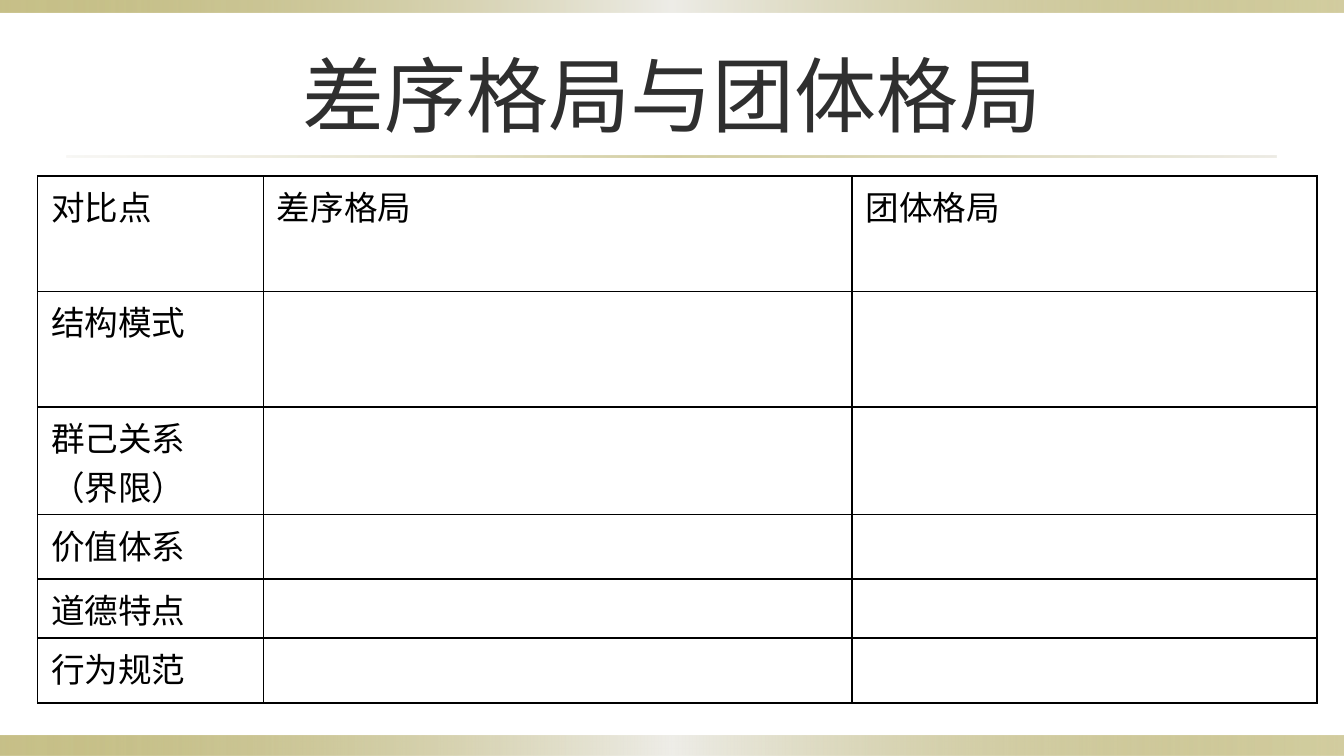
from dataclasses import dataclass

import pptx
import pptx.dml.color
import pptx.enum.shapes
import pptx.enum.text
import pptx.oxml
import pptx.oxml.ns
import pptx.slide
import pptx.table
import pptx.text.text
import pptx.util

Inches = pptx.util.Inches
Pt = pptx.util.Pt

COLORS = {
    "olive": "918415",
    "pale": "EEEDE8",
    "sand": "DCD9CC",
    "title": "2F2F2F",
    "ink": "000000",
}
FONT = "Cabin"
NS = pptx.oxml.ns.nsdecls("a")
SLIDE_WIDTH = 10
SLIDE_HEIGHT = SLIDE_WIDTH * 9 / 16


@dataclass(frozen=True)
class Stop:
    position: int
    color: str
    alpha: int = 100


@dataclass(frozen=True)
class Band:
    left: float
    top: float
    width: float
    height: float
    stops: tuple[Stop, ...]


EDGE = (Stop(0, "olive", 50), Stop(50, "pale"), Stop(100, "olive", 40))
RULE = (Stop(0, "sand", 20), Stop(50, "olive", 40), Stop(100, "sand", 50))
BANDS = (
    Band(0, SLIDE_HEIGHT - 0.15, SLIDE_WIDTH, 0.15, EDGE),
    Band(0, 0, SLIDE_WIDTH, 0.09, EDGE),
    Band(0.5, 1.16, 9, 0.01, RULE),
)

COLUMN_WIDTHS = (1.68, 4.38, 3.46)
ROW_HEIGHTS = (0.86, 0.86, 0.8, 0.48, 0.44, 0.48)
ROWS = (
    ("对比点", "差序格局", "团体格局"),
    ("结构模式", "", ""),
    ("群己关系（界限）", "", ""),
    ("价值体系", "", ""),
    ("道德特点", "", ""),
    ("行为规范", "", ""),
)


def add_run(p: pptx.text.text._Paragraph, text: str, size: float, color: str) -> None:
    r = p.add_run()
    r.text = text
    r.font.name = FONT
    r.font.size = Pt(size)
    r.font.color.rgb = pptx.dml.color.RGBColor.from_string(COLORS[color])


def add_band(s: pptx.slide.Slide, band: Band) -> None:
    """Draw a borderless rectangle with a left-to-right gradient."""
    sp = s.shapes.add_shape(
        pptx.enum.shapes.MSO_SHAPE.RECTANGLE,
        Inches(band.left), Inches(band.top), Inches(band.width), Inches(band.height),
    )
    sp.shadow.inherit = False
    sp.line.fill.background()
    stops = "".join(
        f'<a:gs pos="{stop.position * 1000}"><a:srgbClr val="{COLORS[stop.color]}">'
        f'<a:alpha val="{stop.alpha * 1000}"/></a:srgbClr></a:gs>'
        for stop in band.stops
    )
    gradient = pptx.oxml.parse_xml(
        f'<a:gradFill {NS} rotWithShape="1"><a:gsLst>{stops}</a:gsLst>'
        '<a:lin ang="0" scaled="0"/></a:gradFill>'
    )
    sp._element.spPr.find(pptx.oxml.ns.qn("a:prstGeom")).addnext(gradient)


def add_title(s: pptx.slide.Slide, text: str) -> None:
    sp = s.shapes.add_textbox(Inches(0.5), Inches(0.23), Inches(9), Inches(0.94))
    tf = sp.text_frame
    tf.word_wrap = True
    tf.vertical_anchor = pptx.enum.text.MSO_ANCHOR.MIDDLE
    p = tf.paragraphs[0]
    p.alignment = pptx.enum.text.PP_ALIGN.CENTER
    add_run(p, text, 44, "title")


def style_cell(cell: pptx.table._Cell) -> None:
    """Give a cell thin borders on all sides, no fill and narrow margins."""
    tc_pr = cell._tc.get_or_add_tcPr()
    for side in ("lnL", "lnR", "lnT", "lnB"):
        tc_pr.append(pptx.oxml.parse_xml(
            f'<a:{side} {NS} w="{Pt(1)}"><a:solidFill>'
            f'<a:srgbClr val="{COLORS["ink"]}"/></a:solidFill></a:{side}>'
        ))
    cell.fill.background()
    cell.margin_left = cell.margin_right = Inches(0.1)
    cell.margin_top = cell.margin_bottom = Inches(0.04)


def add_comparison_table(s: pptx.slide.Slide) -> None:
    table = s.shapes.add_table(
        len(ROWS), len(COLUMN_WIDTHS), Inches(0.28), Inches(1.31),
        Inches(sum(COLUMN_WIDTHS)), Inches(sum(ROW_HEIGHTS)),
    ).table
    table.first_row = False
    table.horz_banding = False
    for column, width in zip(table.columns, COLUMN_WIDTHS):
        column.width = Inches(width)
    for row, height, texts in zip(table.rows, ROW_HEIGHTS, ROWS):
        row.height = Inches(height)
        for cell, text in zip(row.cells, texts):
            style_cell(cell)
            if text:
                add_run(cell.text_frame.paragraphs[0], text, 18, "ink")


def main() -> None:
    prs = pptx.Presentation()
    prs.slide_width = Inches(SLIDE_WIDTH)
    prs.slide_height = Inches(SLIDE_HEIGHT)
    s = prs.slides.add_slide(prs.slide_layouts[6])
    for band in BANDS:
        add_band(s, band)
    add_title(s, "差序格局与团体格局")
    add_comparison_table(s)
    prs.save("out.pptx")


if __name__ == "__main__":
    main()
